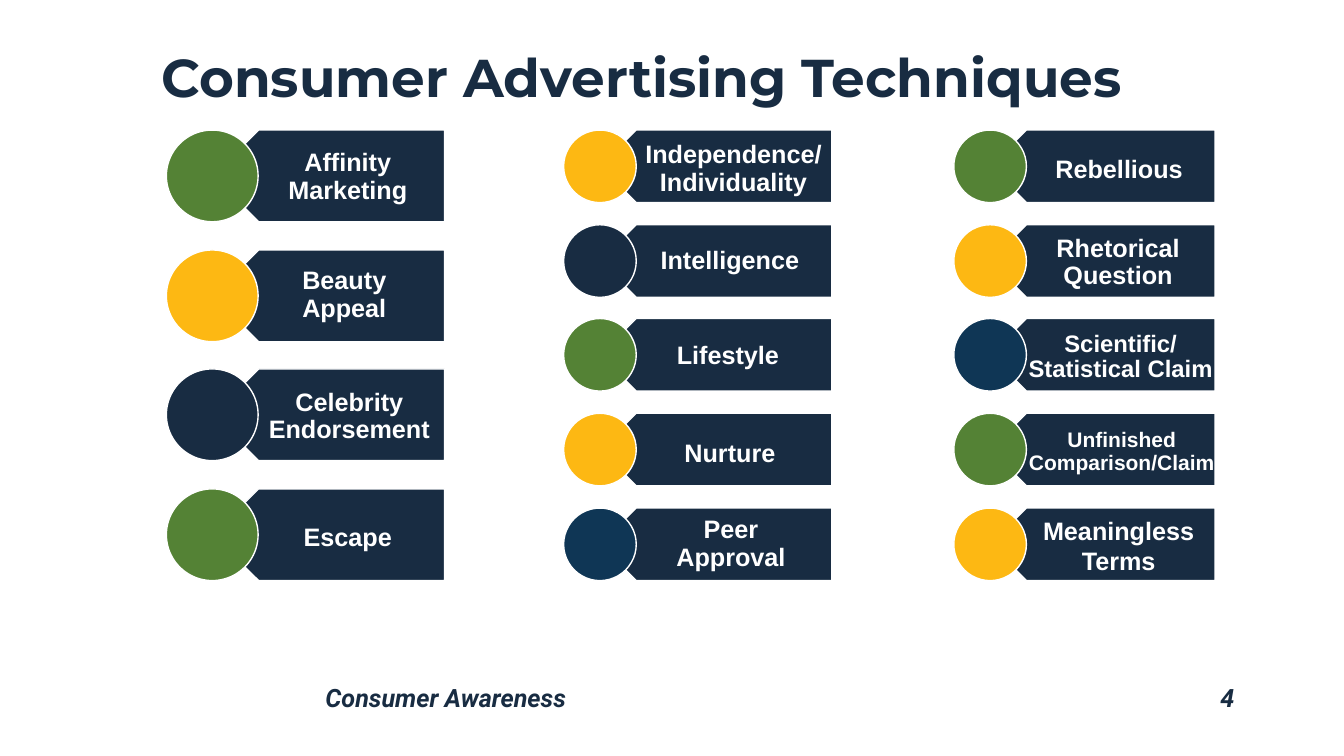
from dataclasses import dataclass

from pptx import Presentation
from pptx.dml.color import RGBColor
from pptx.enum.shapes import MSO_SHAPE as Shape
from pptx.enum.text import MSO_ANCHOR as Anchor, PP_ALIGN as Align
from pptx.slide import Slide
from pptx.util import Emu, Pt

PX = 9144  # EMU in one px, 100 px to the inch


@dataclass(frozen=True)
class Theme:
    navy: str = "182C42"
    blue: str = "0F3655"
    green: str = "548235"
    gold: str = "FDB813"
    white: str = "FFFFFF"
    head: int = 38
    body: int = 18
    small: int = 17
    tiny: int = 15


@dataclass(frozen=True)
class Box:
    x: int
    y: int
    w: int
    h: int

    def emu(self) -> tuple[Emu, ...]:
        return tuple(Emu(n * PX) for n in (self.x, self.y, self.w, self.h))


@dataclass(frozen=True)
class Style:
    font: str
    size: int
    color: str
    align: Align = Align.LEFT
    anchor: Anchor = Anchor.TOP
    italic: bool = False
    lead: float = 0.9
    after: int = 0


@dataclass(frozen=True)
class Item:
    text: str
    hue: str
    box: Box
    anchor: Anchor = Anchor.TOP
    size: int = Theme.body
    lead: float = 0.9
    after: int = 0


@dataclass(frozen=True)
class Column:
    x: int
    disc: int
    plate: int
    items: tuple[Item, ...]


T = Theme()
TOP, BOTTOM = 129, 576
MID = Anchor.MIDDLE

COLUMNS = (
    Column(165, 91, 230, (
        Item("Affinity Marketing", T.green, Box(257, 144, 176, 71)),
        Item("Beauty Appeal", T.gold, Box(251, 261, 181, 74)),
        Item("Celebrity Endorsement", T.navy, Box(256, 382, 181, 40)),
        Item("Escape", T.green, Box(257, 516, 176, 40)),
    )),
    Column(559, 72, 230, (
        Item("Independence/Individuality", T.gold, Box(628, 136, 199, 40)),
        Item("Intelligence", T.navy, Box(631, 241, 186, 40)),
        Item("Lifestyle", T.green, Box(629, 335, 186, 40)),
        Item("Nurture", T.gold, Box(631, 416, 186, 69), MID),
        Item("Peer Approval", T.blue, Box(637, 503, 176, 74), MID),
    )),
    Column(946, 72, 223, (
        Item("Rebellious", T.green, Box(1017, 135, 186, 68), MID),
        Item("Rhetorical Question", T.gold, Box(1016, 228, 186, 66), MID),
        Item("Scientific/ Statistical Claim", T.blue,
             Box(1004, 320, 215, 69), MID, T.small),
        Item("Unfinished Comparison/Claim", T.green,
             Box(1005, 419, 215, 59), MID, T.tiny),
        Item("Meaningless Terms", T.gold, Box(1017, 506, 185, 59),
             lead=1.0, after=12),
    )),
)


def write(slide: Slide, text: str, box: Box, style: Style) -> None:
    frame = slide.shapes.add_textbox(*box.emu()).text_frame
    frame.word_wrap = True
    frame.vertical_anchor = style.anchor
    frame.text = text
    para = frame.paragraphs[0]
    para.alignment = style.align
    para.line_spacing = style.lead
    para.space_after = Pt(style.after)
    font = para.runs[0].font
    font.name = style.font
    font.size = Pt(style.size)
    font.bold = True
    font.italic = style.italic
    font.color.rgb = RGBColor.from_string(style.color)


def draw(slide: Slide, kind: Shape, box: Box, hue: str, turn: int = 0) -> None:
    shape = slide.shapes.add_shape(kind, *box.emu())
    shape.rotation = turn
    shape.shadow.inherit = False
    shape.fill.solid()
    shape.fill.fore_color.rgb = RGBColor.from_string(hue)
    shape.line.color.rgb = RGBColor.from_string(T.white)
    shape.line.width = Pt(1)


def stack(slide: Slide, col: Column) -> None:
    """Spread the column's plates, discs and labels evenly from TOP to BOTTOM."""
    disc = col.disc
    step = (BOTTOM - TOP - disc) / (len(col.items) - 1)
    for i, item in enumerate(col.items):
        y = round(TOP + i * step)
        plate = Box(col.x + round(disc / 2), y, col.plate, disc)
        draw(slide, Shape.PENTAGON, plate, T.navy, 180)
        draw(slide, Shape.OVAL, Box(col.x, y, disc, disc), item.hue)
        style = Style("Arial", item.size, T.white, Align.CENTER, item.anchor,
                      lead=item.lead, after=item.after)
        write(slide, item.text, item.box, style)


def main() -> None:
    deck = Presentation()
    deck.slide_width, deck.slide_height = Emu(1333 * PX), Emu(750 * PX)
    slide = deck.slides.add_slide(deck.slide_layouts[6])
    write(slide, "Consumer Advertising Techniques", Box(150, 11, 1084, 102),
          Style("Montserrat", T.head, T.navy, anchor=Anchor.BOTTOM))
    for col in COLUMNS:
        stack(slide, col)
    write(slide, "Consumer Awareness", Box(313, 675, 763, 38),
          Style("Roboto", T.body, T.navy, italic=True))
    write(slide, "4", Box(1076, 675, 158, 38),
          Style("Roboto", T.body, T.navy, Align.RIGHT, italic=True))
    deck.save("out.pptx")


if __name__ == "__main__":
    main()
